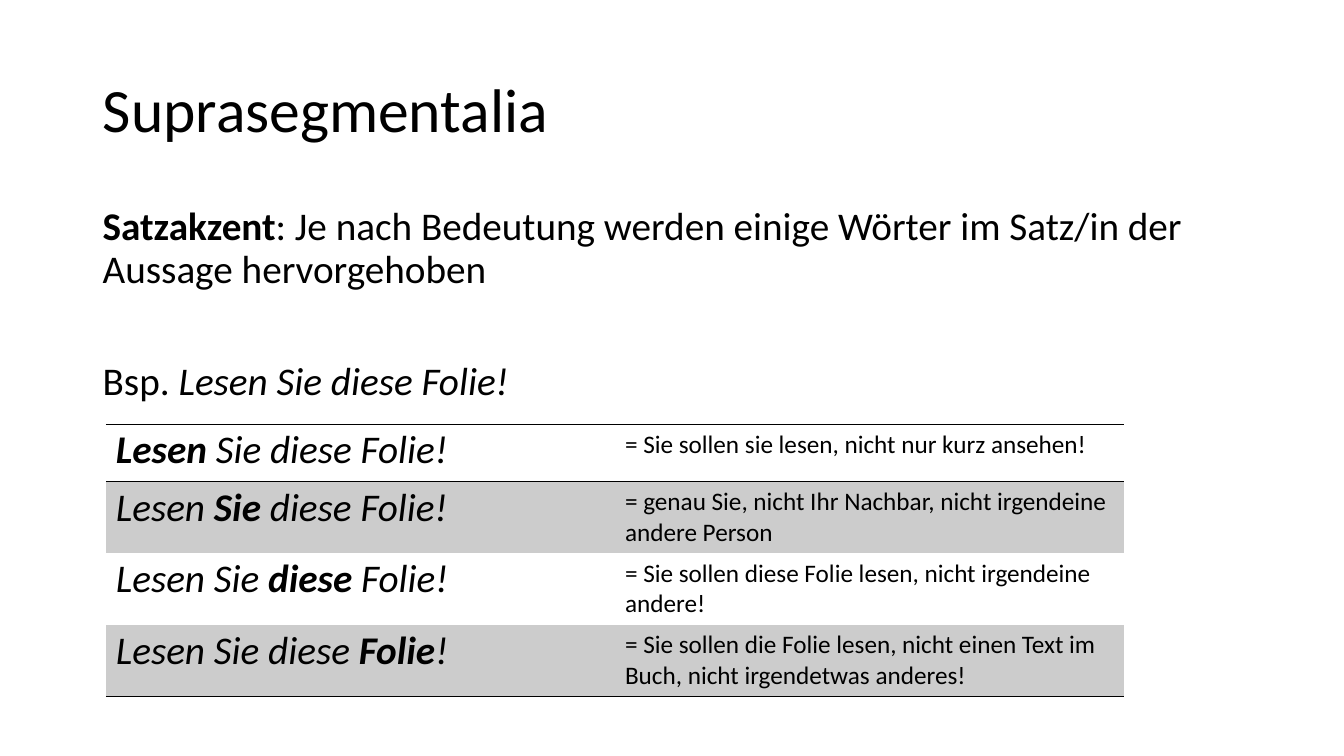
from typing import NamedTuple

from lxml.etree import SubElement
from pptx import Presentation
from pptx.dml.color import RGBColor
from pptx.enum.text import MSO_ANCHOR as Anchor, MSO_AUTO_SIZE as AutoSize, PP_ALIGN as Align
from pptx.oxml.ns import qn
from pptx.util import Inches, Pt

BLACK = RGBColor(0x00, 0x00, 0x00)
BAND_GREY = RGBColor(0xCC, 0xCC, 0xCC)
FONT = "Calibri"
BODY_SIZE = 28
SLIDE_WIDTH, SLIDE_HEIGHT = Inches(13.33), Inches(7.5)
MARGIN = 0.069
CONTENT_WIDTH = 0.8625


class Span(NamedTuple):
    text: str
    bold: bool = False
    italic: bool = False


class Reading(NamedTuple):
    before: str
    stressed: str
    after: str
    meaning: str
    height: float
    banded: bool = False
    ruled_above: bool = False
    ruled_below: bool = False


READINGS = [
    Reading("", "Lesen", " Sie diese Folie!",
            "= Sie sollen sie lesen, nicht nur kurz ansehen!",
            0.57, ruled_above=True, ruled_below=True),
    Reading("Lesen ", "Sie", " diese Folie!",
            "= genau Sie, nicht Ihr Nachbar, nicht irgendeine andere Person",
            0.71, banded=True, ruled_above=True),
    Reading("Lesen Sie ", "diese", " Folie!",
            "= Sie sollen diese Folie lesen, nicht irgendeine andere!",
            0.71),
    Reading("Lesen Sie diese ", "Folie", "!",
            "= Sie sollen die Folie lesen, nicht einen Text im Buch, "
            "nicht irgendetwas anderes!",
            0.71, banded=True, ruled_below=True),
]


def across(share: float) -> int:
    return round(SLIDE_WIDTH * share)


def down(share: float) -> int:
    return round(SLIDE_HEIGHT * share)


def write(paragraph, spans: list[Span], size: float, line_spacing: float = 0.9) -> None:
    paragraph.alignment = Align.LEFT
    paragraph.line_spacing = line_spacing
    for span in spans:
        run = paragraph.add_run()
        run.text = span.text
        font = run.font
        font.name, font.size = FONT, Pt(size)
        font.bold, font.italic = span.bold, span.italic
        font.color.rgb = BLACK


def rule_cell(cell, above: bool, below: bool) -> None:
    properties = cell._tc.get_or_add_tcPr()
    edges = {"a:lnL": False, "a:lnR": False, "a:lnT": above, "a:lnB": below}
    for position, (tag, visible) in enumerate(edges.items()):
        edge = SubElement(properties, qn(tag), w=str(Pt(1)))
        if visible:
            fill = SubElement(edge, qn("a:solidFill"))
            SubElement(fill, qn("a:srgbClr"), val=str(BLACK))
        else:
            SubElement(edge, qn("a:noFill"))
        properties.insert(position, edge)


def add_heading(slide) -> None:
    title = slide.shapes.title
    title.left, title.top = across(MARGIN), down(0.053)
    title.width, title.height = across(CONTENT_WIDTH), down(0.193)
    frame = title.text_frame
    frame.auto_size = AutoSize.NONE
    frame.vertical_anchor = Anchor.MIDDLE
    write(frame.paragraphs[0], [Span("Suprasegmentalia")], 44)


def add_explanation(slide) -> None:
    explanation = slide.shapes.add_textbox(
        across(MARGIN), down(0.267), across(CONTENT_WIDTH), down(0.635))
    frame = explanation.text_frame
    frame.word_wrap = True
    write(frame.paragraphs[0], [
        Span("Satzakzent", bold=True),
        Span(": Je nach Bedeutung werden einige Wörter im Satz/in der "
             "Aussage hervorgehoben"),
    ], BODY_SIZE)
    example = frame.add_paragraph()
    example.space_before = Pt(50)
    write(example, [Span("Bsp. "), Span("Lesen Sie diese Folie!", italic=True)], BODY_SIZE)


def add_readings(slide) -> None:
    table = slide.shapes.add_table(
        len(READINGS), 2, across(0.0787), down(0.561), across(0.7577),
        Inches(sum(reading.height for reading in READINGS))).table
    table.first_row = False
    table.horz_banding = False
    for index, reading in enumerate(READINGS):
        table.rows[index].height = Inches(reading.height)
        sentence, meaning = table.cell(index, 0), table.cell(index, 1)
        parts = [
            Span(reading.before, italic=True),
            Span(reading.stressed, bold=True, italic=True),
            Span(reading.after, italic=True),
        ]
        write(sentence.text_frame.paragraphs[0],
              [part for part in parts if part.text], BODY_SIZE)
        write(meaning.text_frame.paragraphs[0], [Span(reading.meaning)], 18, 1.0)
        for cell in (sentence, meaning):
            if reading.banded:
                cell.fill.solid()
                cell.fill.fore_color.rgb = BAND_GREY
            else:
                cell.fill.background()
            rule_cell(cell, reading.ruled_above, reading.ruled_below)


def main() -> None:
    deck = Presentation()
    deck.slide_width, deck.slide_height = SLIDE_WIDTH, SLIDE_HEIGHT
    slide = deck.slides.add_slide(deck.slide_layouts[5])
    add_heading(slide)
    add_explanation(slide)
    add_readings(slide)
    deck.save("out.pptx")


if __name__ == "__main__":
    main()
